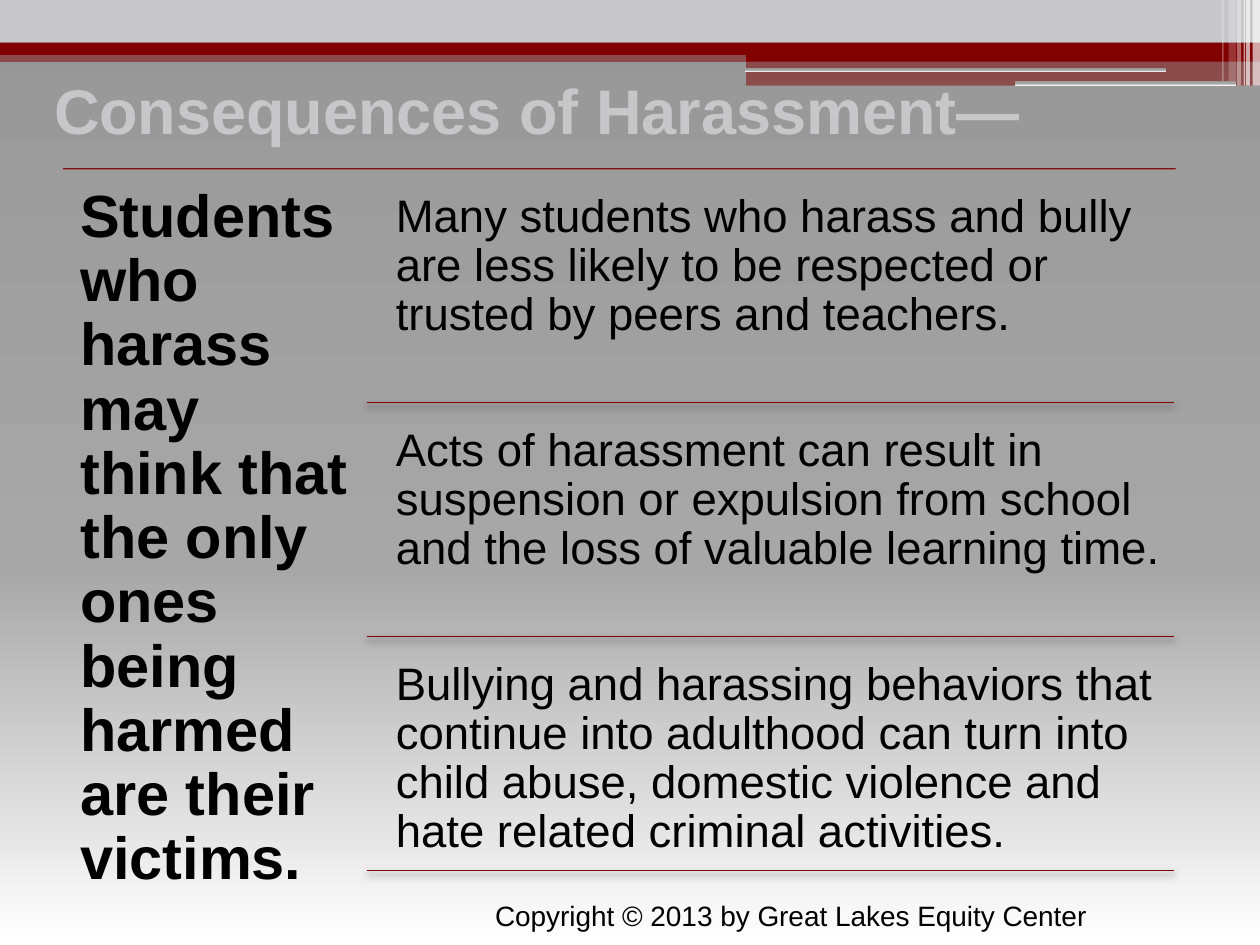
from lxml.etree import SubElement
from pptx import Presentation
from pptx.dml.color import RGBColor
from pptx.enum.shapes import MSO_CONNECTOR, MSO_SHAPE
from pptx.enum.text import MSO_ANCHOR
from pptx.oxml.ns import qn
from pptx.util import Cm, Pt

RED, SILVER, WHITE, BLACK = "810000", "C7C7CA", "FFFFFF", "000000"
BACKDROP_STOPS = [(0, "979797"), (60, "A7A7A7"), (100, WHITE)]

# left, top, width, height, colour, opacity
BANDS = [
    (0, 1.02, 25.4, 0.23, RED, 50),
    (0, 0, 25.4, 0.86, SILVER, 100),
    (0, 0.86, 25.4, 0.25, RED, 100),
    (15.04, 0.99, 10.36, 0.25, RED, 100),
    (15.04, 1.22, 10.36, 0.51, RED, 50),
]
GROOVES = [(15.01, 1.37, 8.51, 0.08), (20.47, 1.63, 4.45, 0.1)]
# left, width, height, opacity
STRIPES = [
    (25.25, 0.15, 1.73, 65),
    (25.12, 0.08, 1.73, 65),
    (25.07, 0.03, 1.73, 60),
    (24.94, 0.08, 1.73, 40),
    (24.77, 0.15, 1.63, 20),
    (24.64, 0.03, 1.63, 30),
]

TITLE = "Consequences of Harassment—"
STATEMENT = ("Students who harass may think that the only ones being harmed "
             "are their victims.")
CONSEQUENCES = [
    "Many students who harass and bully are less likely to be respected or "
    "trusted by peers and teachers.",
    "Acts of harassment can result in suspension or expulsion from school and "
    "the loss of valuable learning time.",
    "Bullying and harassing behaviors that continue into adulthood can turn "
    "into child abuse, domestic violence and hate related criminal activities.",
]
COPYRIGHT = "Copyright © 2013 by Great Lakes Equity Center"
ROW_TOP, ROW_HEIGHT, ROW_STEP = 3.61, 4.5, 4.72


def rgb(colour):
    return RGBColor.from_string(colour)


def set_opacity(properties, opacity):
    """Make the first plain colour inside the element partly transparent."""
    colour = next(properties.iter(qn("a:srgbClr")))
    SubElement(colour, qn("a:alpha"), val=str(opacity * 1000))


def fill_backdrop(fill, element):
    """Give a fill, found inside the element, the grey-to-white gradient."""
    fill.gradient()
    fill.gradient_angle = 270
    stops = next(element.iter(qn("a:gsLst")))
    for stop in list(stops):
        stops.remove(stop)
    for position, colour in BACKDROP_STOPS:
        stop = SubElement(stops, qn("a:gs"), pos=str(position * 1000))
        SubElement(stop, qn("a:srgbClr"), val=colour)


def add_box(slide, left, top, width, height, kind=MSO_SHAPE.RECTANGLE):
    shape = slide.shapes.add_shape(kind, Cm(left), Cm(top), Cm(width), Cm(height))
    shape.shadow.inherit = False
    shape.line.fill.background()
    return shape


def add_band(slide, left, top, width, height, colour, opacity):
    shape = add_box(slide, left, top, width, height)
    shape.fill.solid()
    shape.fill.fore_color.rgb = rgb(colour)
    if opacity < 100:
        set_opacity(shape.element.spPr, opacity)


def add_groove(slide, left, top, width, height):
    shape = add_box(slide, left, top, width, height, MSO_SHAPE.ROUNDED_RECTANGLE)
    fill_backdrop(shape.fill, shape.element)


def add_rule(slide, left, right, y, opacity=100, shadow_opacity=40):
    """Add a thin red horizontal line with a soft shadow below it."""
    rule = slide.shapes.add_connector(
        MSO_CONNECTOR.STRAIGHT, Cm(left), Cm(y), Cm(right), Cm(y))
    rule.line.color.rgb = rgb(RED)
    rule.line.width = Pt(0.75)
    properties = rule.element.spPr
    if opacity < 100:
        set_opacity(properties, opacity)
    effects = SubElement(properties, qn("a:effectLst"))
    shadow = SubElement(effects, qn("a:outerShdw"), blurRad=str(Pt(4)),
                        dist=str(Pt(2)), dir="5400000", rotWithShape="0")
    SubElement(shadow, qn("a:srgbClr"), val=BLACK)
    set_opacity(shadow, shadow_opacity)


def add_text(slide, text, left, top, width, height, size, colour=BLACK,
             bold=False, inset=None, line_spacing=None, anchor=MSO_ANCHOR.TOP):
    box = slide.shapes.add_textbox(Cm(left), Cm(top), Cm(width), Cm(height))
    frame = box.text_frame
    frame.word_wrap = True
    frame.vertical_anchor = anchor
    if inset is not None:
        frame.margin_left = frame.margin_right = Cm(inset)
        frame.margin_top = frame.margin_bottom = Cm(inset)
    frame.text = text
    paragraph = frame.paragraphs[0]
    paragraph.line_spacing = line_spacing
    font = paragraph.runs[0].font
    font.name = "Arial"
    font.size = Pt(size)
    font.bold = bold
    font.color.rgb = rgb(colour)


def add_header(slide):
    for band in BANDS:
        add_band(slide, *band)
    for groove in GROOVES:
        add_groove(slide, *groove)
    for left, width, height, opacity in STRIPES:
        add_band(slide, left, 0, width, height, WHITE, opacity)


def add_consequences(slide):
    add_rule(slide, 1.27, 23.7, 3.4, opacity=90, shadow_opacity=45)
    add_text(slide, STATEMENT, 1.27, 3.4, 6.12, 14.38, 34, bold=True,
             inset=0.35, line_spacing=0.9)
    for row, consequence in enumerate(CONSEQUENCES):
        top = ROW_TOP + row * ROW_STEP
        add_text(slide, consequence, 7.7, top, 16, ROW_HEIGHT, 26,
                 inset=0.28, line_spacing=0.9)
        add_rule(slide, 7.39, 23.67, top + ROW_HEIGHT)


def main():
    presentation = Presentation()
    presentation.slide_width, presentation.slide_height = Cm(25.4), Cm(19.05)
    slide = presentation.slides.add_slide(presentation.slide_layouts[6])
    fill_backdrop(slide.background.fill, slide.element)
    add_header(slide)
    add_consequences(slide)
    add_text(slide, TITLE, 0.84, 0.84, 24.56, 2.74, 36, SILVER, bold=True,
             anchor=MSO_ANCHOR.MIDDLE)
    add_text(slide, COPYRIGHT, 9.73, 17.98, 12.5, 0.94, 16)
    presentation.save("out.pptx")


if __name__ == "__main__":
    main()
